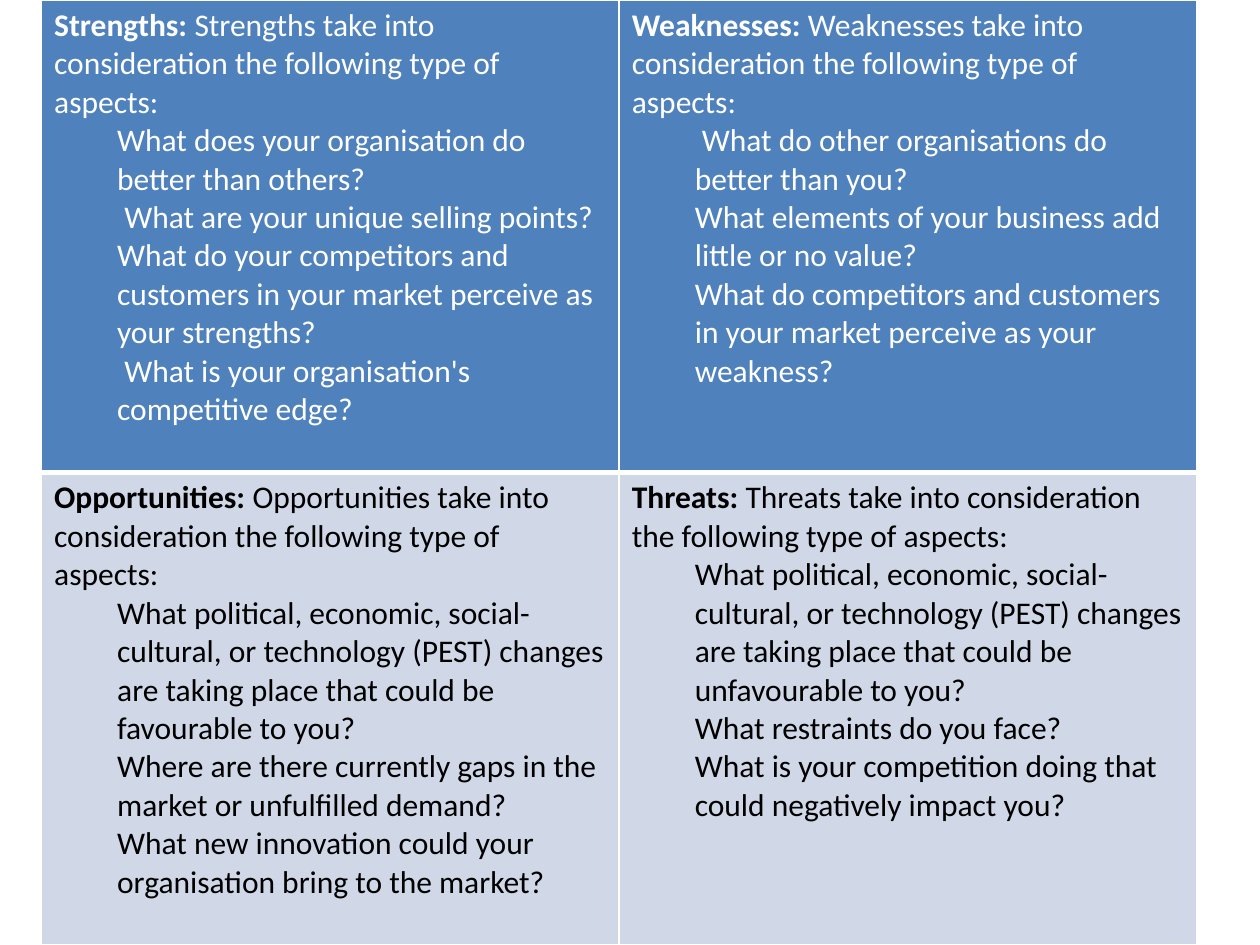
from lxml.etree import SubElement
from pptx import Presentation
from pptx.dml.color import RGBColor
from pptx.oxml.ns import qn
from pptx.util import Inches, Pt

WHITE = RGBColor(0xFF, 0xFF, 0xFF)
BLACK = RGBColor(0x00, 0x00, 0x00)
BLUE = RGBColor(0x4F, 0x81, 0xBD)
PALE_BLUE = RGBColor(0xD0, 0xD8, 0xE8)

# Content: a grid of (heading, questions)
SWOT = [
    [
        ("Strengths", [
            "What does your organisation do better than others?",
            " What are your unique selling points?",
            "What do your competitors and customers in your market perceive as your strengths?",
            " What is your organisation's competitive edge?",
        ]),
        ("Weaknesses", [
            " What do other organisations do better than you?",
            "What elements of your business add little or no value?",
            "What do competitors and customers in your market perceive as your weakness?",
        ]),
    ],
    [
        ("Opportunities", [
            "What political, economic, social-cultural, or technology (PEST) changes "
            "are taking place that could be favourable to you?",
            "Where are there currently gaps in the market or unfulfilled demand?",
            "What new innovation could your organisation bring to the market?",
        ]),
        ("Threats", [
            "What political, economic, social-cultural, or technology (PEST) changes "
            "are taking place that could be unfavourable to you?",
            "What restraints do you face?",
            "What is your competition doing that could negatively impact you?",
        ]),
    ],
]
INTRO = "{} take into consideration the following type of aspects:"

# One look per row: fill, text colour and border widths in points
ROW_LOOKS = [
    {"fill": BLUE, "text": WHITE, "borders": {"lnL": 1, "lnR": 1, "lnT": 1, "lnB": 3}},
    {"fill": PALE_BLUE, "text": BLACK, "borders": {"lnL": 1, "lnR": 1, "lnT": 3, "lnB": 1}},
]
FONT = {"name": "Calibri", "size": Pt(18)}


def add_text(paragraph, text, color, bold=False):
    run = paragraph.add_run()
    run.text = text
    for attribute, value in {**FONT, "bold": bold}.items():
        setattr(run.font, attribute, value)
    run.font.color.rgb = color


def add_borders(cell, widths):
    properties = cell._tc.get_or_add_tcPr()
    for position, (side, width) in enumerate(widths.items()):
        line = SubElement(properties, qn(f"a:{side}"), w=str(Pt(width)))
        fill = SubElement(line, qn("a:solidFill"))
        SubElement(fill, qn("a:srgbClr"), val=str(WHITE))
        properties.insert(position, line)  # borders come before the fill


def fill_quadrant(cell, heading, questions, look):
    cell.fill.solid()
    cell.fill.fore_color.rgb = look["fill"]
    add_borders(cell, look["borders"])

    frame = cell.text_frame
    opening = frame.paragraphs[0]
    add_text(opening, f"{heading}: ", look["text"], bold=True)
    add_text(opening, INTRO.format(heading), look["text"])
    for question in questions:
        paragraph = frame.add_paragraph()
        paragraph.level = 1
        indents = paragraph._p.get_or_add_pPr()
        indents.set("marL", str(Inches(0.5)))
        indents.set("indent", "0")
        add_text(paragraph, question, look["text"])


def main():
    deck = Presentation()
    deck.slide_width, deck.slide_height = Inches(10), Inches(7.5)
    slide = deck.slides.add_slide(deck.slide_layouts[6])

    # Table of quadrants, over the full slide height
    rows, columns = len(SWOT), len(SWOT[0])
    table = slide.shapes.add_table(
        rows, columns, Inches(0.33), 0, Inches(9.17), deck.slide_height
    ).table
    for r, (quadrants, look) in enumerate(zip(SWOT, ROW_LOOKS)):
        for c, (heading, questions) in enumerate(quadrants):
            fill_quadrant(table.cell(r, c), heading, questions, look)

    deck.save("out.pptx")


if __name__ == "__main__":
    main()
